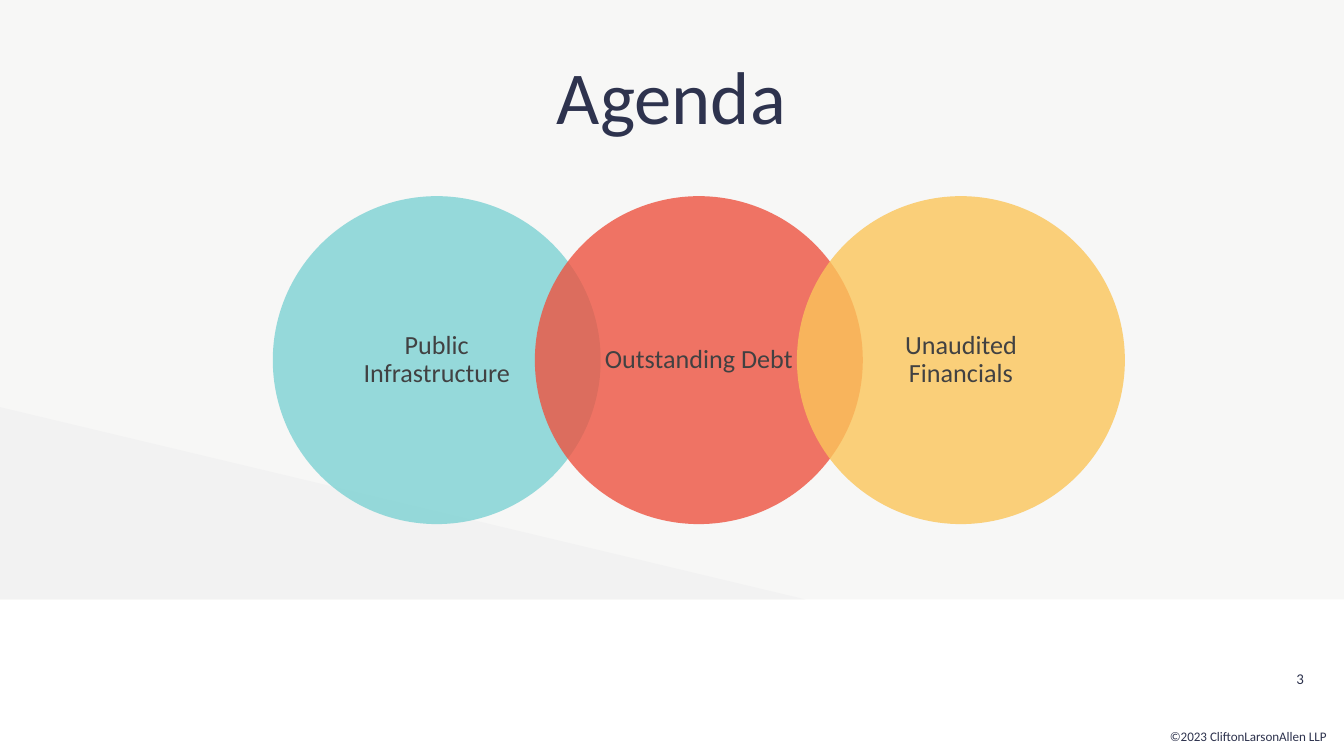
from lxml import etree
from pptx import Presentation
from pptx import util as u
from pptx.dml.color import RGBColor
from pptx.enum import shapes, text
from pptx.oxml import ns

NAVY = "2E334E"
GRAY = "414142"


def add_filled(kind, left, top, width, height, color, opacity=100):
    """Add a borderless preset shape; opacity is a percentage."""
    shape = slide.shapes.add_shape(
        kind, u.Inches(left), u.Inches(top), u.Inches(width), u.Inches(height))
    shape.shadow.inherit = False
    shape.fill.solid()
    shape.fill.fore_color.rgb = RGBColor.from_string(color)
    shape.line.fill.background()
    if opacity < 100:
        color_element = shape.element.spPr.find(
            ns.qn("a:solidFill") + "/" + ns.qn("a:srgbClr"))
        alpha = etree.SubElement(color_element, ns.qn("a:alpha"))
        alpha.set("val", str(opacity * 1000))


def add_text(words, left, top, width, height, size, color, align,
             anchor=text.MSO_ANCHOR.MIDDLE):
    box = slide.shapes.add_textbox(
        u.Inches(left), u.Inches(top), u.Inches(width), u.Inches(height))
    frame = box.text_frame
    frame.word_wrap = True
    frame.vertical_anchor = anchor
    paragraph = frame.paragraphs[0]
    paragraph.alignment = align
    run = paragraph.add_run()
    run.text = words
    run.font.name = "Calibri"
    run.font.size = u.Pt(size)
    run.font.color.rgb = RGBColor.from_string(color)
    return frame


presentation = Presentation()
presentation.slide_width = u.Inches(10)
presentation.slide_height = u.Inches(10 * 9 / 16)
slide = presentation.slides.add_slide(presentation.slide_layouts[6])

# Backdrop
add_filled(shapes.MSO_SHAPE.RECTANGLE, 0, 0, 10, 4.46, "F7F7F6")
add_filled(shapes.MSO_SHAPE.RIGHT_TRIANGLE, 0, 3.03, 5.99, 1.43, "F2F2F2")

# Footer and title
add_text("3", 9.37, 4.86, 0.43, 0.38, 8, NAVY, text.PP_ALIGN.RIGHT)
add_text("©2023 CliftonLarsonAllen LLP ", 8.57, 5.37, 1.42, 0.22, 7, NAVY,
         text.PP_ALIGN.RIGHT)
add_text("Agenda", 0.84, 0.36, 8.31, 0.73, 40, NAVY, text.PP_ALIGN.CENTER,
         text.MSO_ANCHOR.BOTTOM)

# Overlapping agenda circles
topics = [
    ("Public Infrastructure", "7DD2D3"),
    ("Outstanding Debt", "EE5340"),
    ("Unaudited Financials", "FBC55A"),
]
diameter = 2.44
step = 1.95
label_inset = 0.36
label_size = diameter - 2 * label_inset
circle_top = 1.46
for index, (topic, color) in enumerate(topics):
    left = 2.03 + index * step
    add_filled(shapes.MSO_SHAPE.OVAL, left, circle_top, diameter, diameter,
               color, opacity=80)
    frame = add_text(topic, left + label_inset, circle_top + label_inset,
                     label_size, label_size, 14, GRAY, text.PP_ALIGN.CENTER)
    frame.margin_left = frame.margin_right = u.Inches(0.13)
    frame.margin_top = frame.margin_bottom = u.Inches(0.02)
    frame.paragraphs[0].line_spacing = 0.9

presentation.save("out.pptx")
